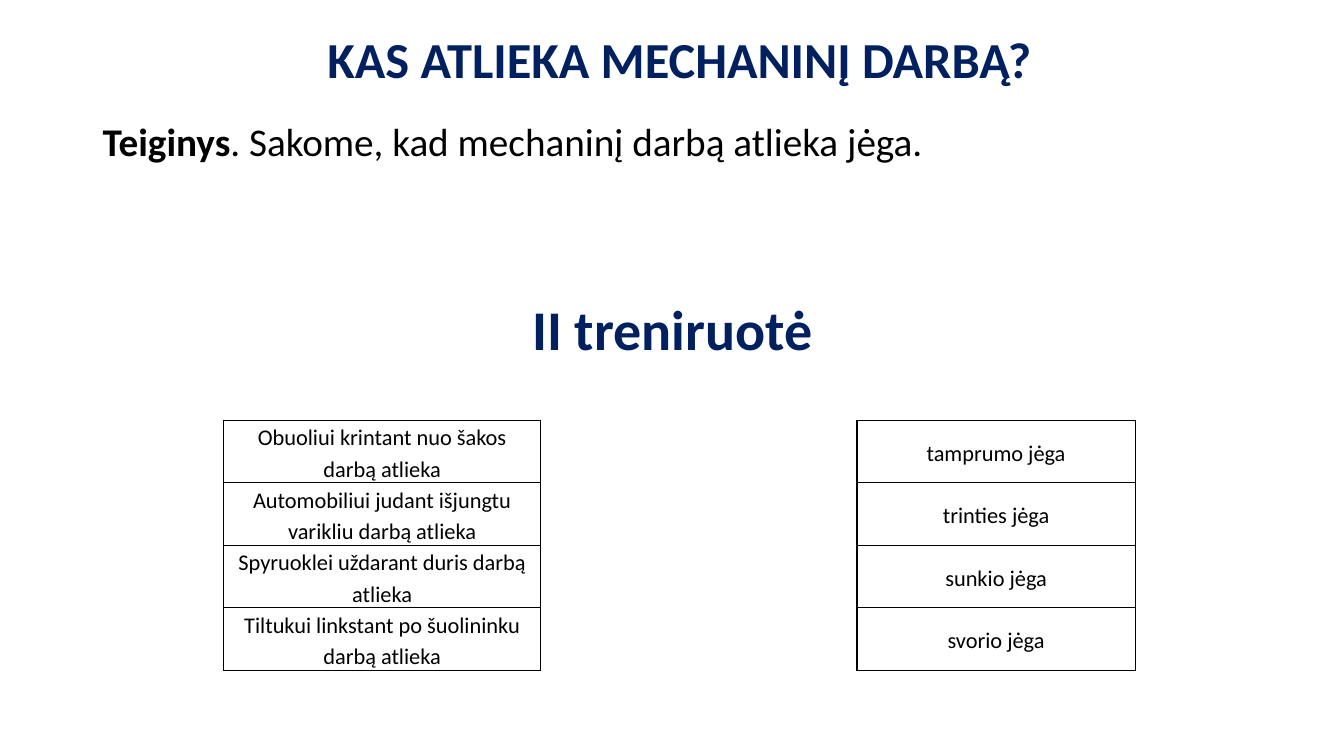
"""Build the slide on which force does mechanical work, with a matching exercise."""
from lxml.etree import SubElement
from pptx import Presentation
from pptx.dml.color import RGBColor
from pptx.enum.text import MSO_ANCHOR as ANCHOR, PP_ALIGN as ALIGN
from pptx.oxml import parse_xml
from pptx.oxml.ns import nsdecls, qn
from pptx.util import Inches, Pt

NAVY = RGBColor(0x00, 0x20, 0x60)
BLACK = RGBColor(0x00, 0x00, 0x00)

HEADING = dict(bold=True, color=NAVY)
BODY = dict(size=28, color=BLACK)
TEXTS = [
    dict(box=(0.92, 1.17, 11.5, 4.76), anchor=ANCHOR.TOP,
         para=dict(alignment=ALIGN.LEFT, line_spacing=0.9, space_before=Pt(10)),
         runs=[("Teiginys", dict(BODY, bold=True)),
               (". Sakome, kad mechaninį darbą atlieka jėga.", dict(BODY, bold=False))]),
    dict(box=(0.99, 0.34, 11.5, 0.56), anchor=ANCHOR.MIDDLE,
         para=dict(alignment=ALIGN.CENTER, line_spacing=0.9),
         runs=[("KAS ATLIEKA MECHANINĮ DARBĄ?", dict(HEADING, size=36))]),
    dict(box=(0.92, 2.57, 11.5, 1.45), anchor=ANCHOR.MIDDLE,
         para=dict(alignment=ALIGN.CENTER, line_spacing=0.9),
         runs=[("II treniruotė", dict(HEADING, size=40))]),
]
PAIRS = [
    ("Obuoliui krintant nuo šakos darbą atlieka", "tamprumo jėga"),
    ("Automobiliui judant išjungtu varikliu darbą atlieka", "trinties jėga"),
    ("Spyruoklei uždarant duris darbą atlieka", "sunkio jėga"),
    ("Tiltukui linkstant po šuolininku darbą atlieka", "svorio jėga"),
]
TABLE_LEFT, TABLE_TOP = 2.22, 4.17
COLUMNS = [3.14, 3.14, 2.76]
ROW_HEIGHT = 0.62
CELL_PARA = dict(alignment=ALIGN.CENTER, line_spacing=1.15)
CELL_FONT = dict(size=16, bold=False, color=BLACK)
CELL_FORMAT = dict(vertical_anchor=ANCHOR.MIDDLE, margin_left=Inches(0.07),
                   margin_right=Inches(0.07), margin_top=0, margin_bottom=0)


def set_all(target, values):
    for name, value in values.items():
        setattr(target, name, value)


def write(tf, runs, para):
    p = tf.paragraphs[0]
    set_all(p, para)
    for text, font in runs:
        r = p.add_run()
        r.text = text
        set_all(r.font, dict(name="Calibri", size=Pt(font["size"]), bold=font["bold"]))
        r.font.color.rgb = font["color"]


def set_borders(cell, visible):
    tc_pr = cell._tc.get_or_add_tcPr()
    for i, side in enumerate("LRTB"):
        ln = parse_xml(f'<a:ln{side} {nsdecls("a")} w="{Pt(1)}"/>')
        if side in visible:
            fill = SubElement(ln, qn("a:solidFill"))
            SubElement(fill, qn("a:srgbClr"), val=str(BLACK))
        else:
            SubElement(ln, qn("a:noFill"))
        tc_pr.insert(i, ln)


def add_text(s, item):
    tf = s.shapes.add_textbox(*map(Inches, item["box"])).text_frame
    set_all(tf, dict(word_wrap=True, vertical_anchor=item["anchor"]))
    write(tf, item["runs"], item["para"])


def add_exercise(s):
    size = sum(COLUMNS), ROW_HEIGHT * len(PAIRS)
    frame = s.shapes.add_table(len(PAIRS), len(COLUMNS),
                               *map(Inches, (TABLE_LEFT, TABLE_TOP, *size)))
    table = frame.table
    set_all(table, dict(first_row=False, horz_banding=False))
    for column, width in zip(table.columns, COLUMNS):
        column.width = Inches(width)
    for row, (situation, force) in zip(table.rows, PAIRS):
        row.height = Inches(ROW_HEIGHT)
        for cell, text in zip(row.cells, (situation, "", force)):
            cell.fill.background()
            set_borders(cell, "LRTB" if text else "LR")
            if text:
                set_all(cell, CELL_FORMAT)
                write(cell.text_frame, [(text, CELL_FONT)], CELL_PARA)


def main():
    prs = Presentation()
    set_all(prs, dict(slide_width=Inches(13.33), slide_height=Inches(7.5)))
    s = prs.slides.add_slide(prs.slide_layouts[6])
    for item in TEXTS:
        add_text(s, item)
    add_exercise(s)
    prs.save("out.pptx")


if __name__ == "__main__":
    main()
